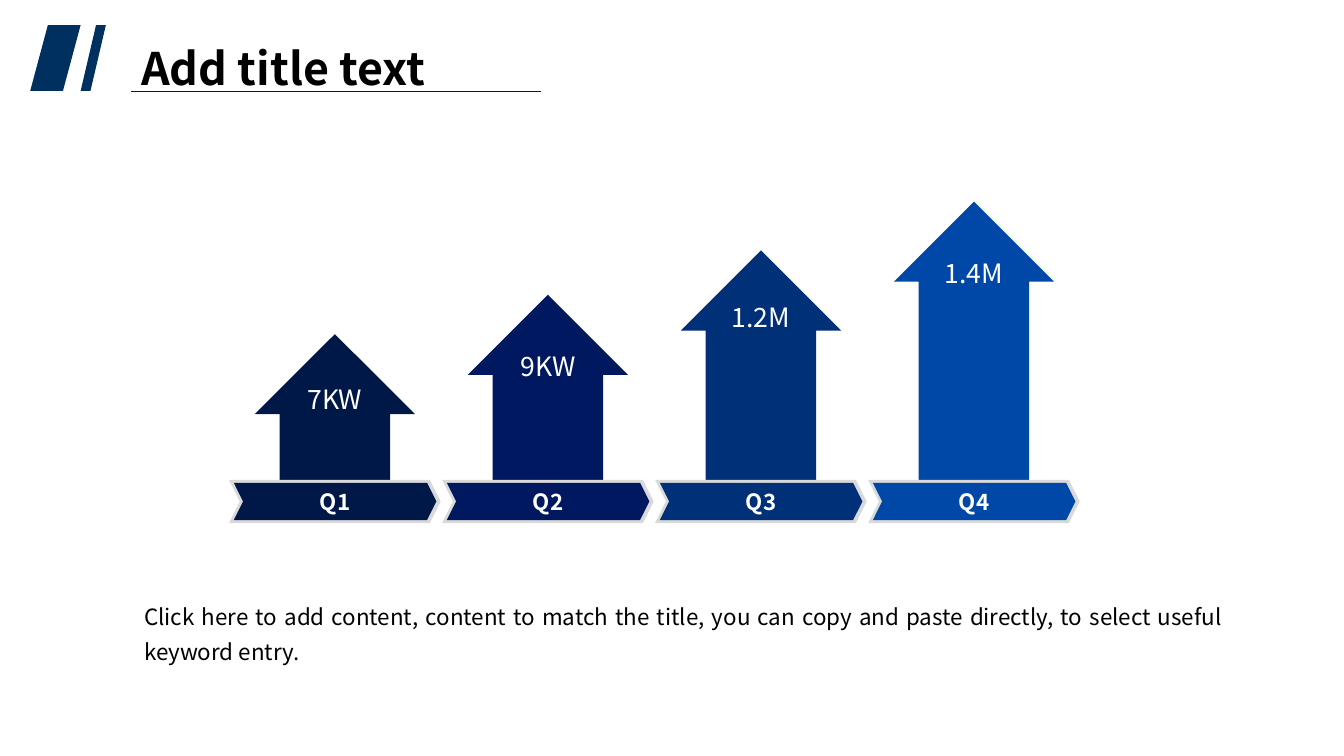
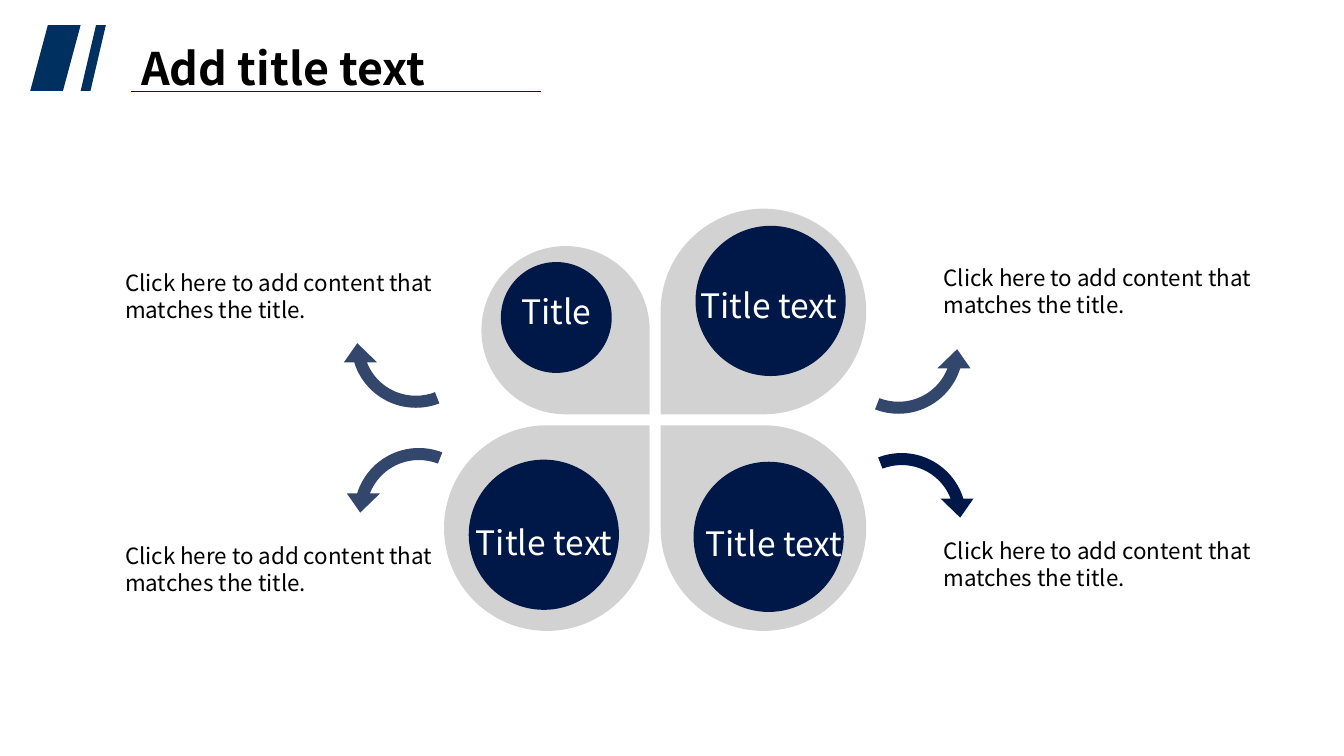
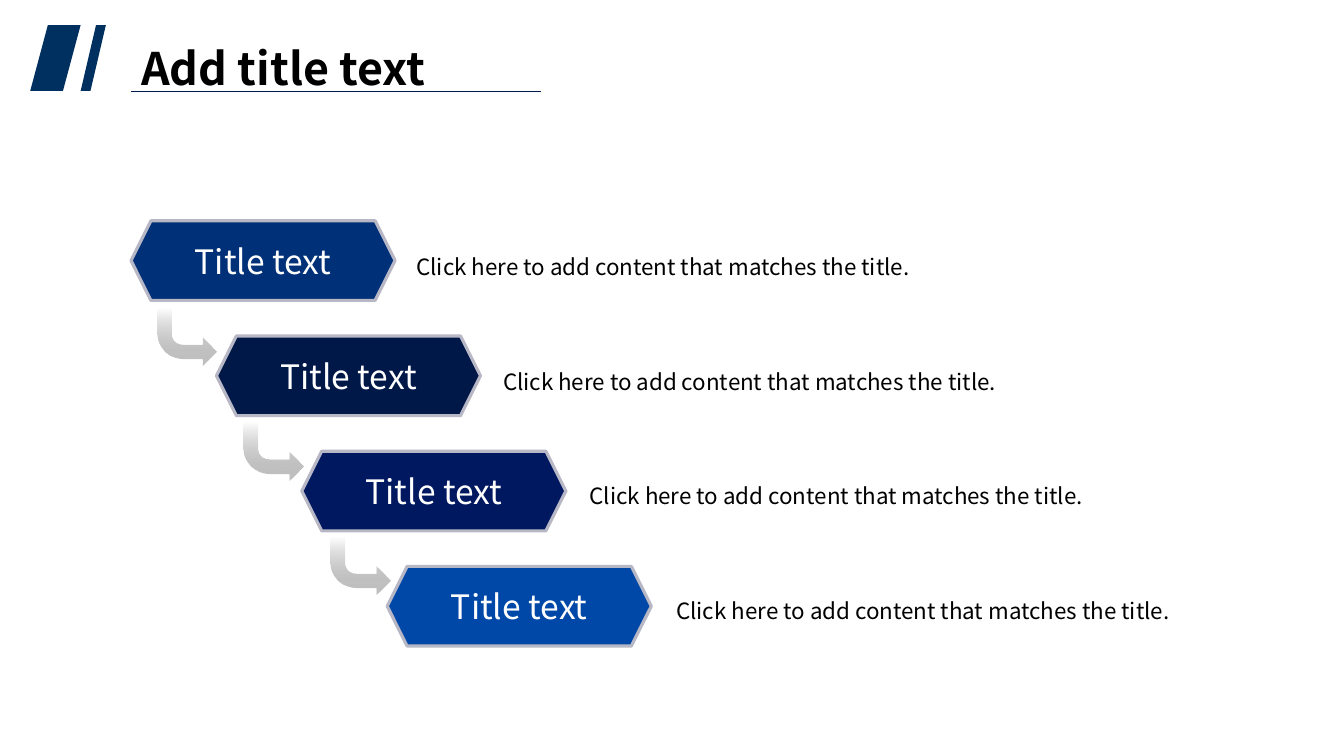
from dataclasses import dataclass

import pptx
import pptx.dml.color
import pptx.enum.shapes
import pptx.enum.text
import pptx.oxml.ns
import pptx.oxml.xmlchemy
import pptx.shapes.autoshape
import pptx.slide
import pptx.util
from lxml import etree

Pt = pptx.util.Pt
SHAPE = pptx.enum.shapes.MSO_SHAPE
ALIGN = pptx.enum.text.PP_ALIGN
ANCHOR = pptx.enum.text.MSO_ANCHOR
AUTO_SIZE = pptx.enum.text.MSO_AUTO_SIZE
qn = pptx.oxml.ns.qn

FONT = "Noto Sans CJK SC"
BLACK, WHITE = "000000", "FFFFFF"
MIDNIGHT, INDIGO, NAVY, ROYAL = "001848", "001860", "003078", "0048A8"
ACCENT = "003060"
PETAL_GREY, BORDER_GREY, HEXAGON_EDGE = "A6A6A6", "D9D9D9", "B7B7C5"
NOTE = "Click here to add content that matches the title."


@dataclass(frozen=True)
class Box:
    left: float
    top: float
    width: float
    height: float

    def lengths(self) -> tuple:
        return Pt(self.left), Pt(self.top), Pt(self.width), Pt(self.height)


@dataclass(frozen=True)
class TextStyle:
    size: float
    colour: str = BLACK
    bold: bool = False
    align: ALIGN = ALIGN.LEFT
    anchor: ANCHOR = ANCHOR.TOP
    line_spacing: float = 1.0
    space_before: float = 0
    space_after: float = 0
    inset_x: float = 9.4
    inset_y: float = 5
    wrap: bool = True
    grow: bool = True


@dataclass(frozen=True)
class Quarter:
    name: str
    value: str
    colour: str
    arrow_top: float
    value_top: float


@dataclass(frozen=True)
class Petal:
    label: str
    on_right: bool
    on_top: bool
    size: float
    circle: Box
    label_box: Box
    note_top: float
    arrow_left: float
    arrow_top: float
    arrow_opacity: int = 80


TITLE_STYLE = TextStyle(32, bold=True, line_spacing=0.9, inset_x=7.2, inset_y=3.6, grow=False)
BODY_STYLE = TextStyle(16, align=ALIGN.JUSTIFY, anchor=ANCHOR.MIDDLE, line_spacing=1.3,
                       space_before=8, grow=False)
QUARTER_STYLE = TextStyle(16, WHITE, bold=True, align=ALIGN.CENTER, anchor=ANCHOR.MIDDLE,
                          inset_x=7.2, inset_y=3.6, grow=False)
VALUE_STYLE = TextStyle(19, WHITE, align=ALIGN.CENTER, anchor=ANCHOR.MIDDLE)
PETAL_LABEL_STYLE = TextStyle(24, WHITE, wrap=False)
PETAL_NOTE_STYLE = TextStyle(16)
STEP_STYLE = TextStyle(24, WHITE, align=ALIGN.CENTER, anchor=ANCHOR.MIDDLE, grow=False)
STEP_NOTE_STYLE = TextStyle(16, align=ALIGN.JUSTIFY, anchor=ANCHOR.MIDDLE, line_spacing=1.3,
                            space_after=8)

QUARTERS = [
    Quarter("Q1", "7KW", MIDNIGHT, 238.7, 268.6),
    Quarter("Q2", "9KW", INDIGO, 210.6, 244.8),
    Quarter("Q3", "1.2M", NAVY, 178.9, 210.2),
    Quarter("Q4", "1.4M", ROYAL, 144, 178.6),
]

PETALS = [
    Petal("Title", False, True, 120.2, Box(357.8, 187.2, 79.2, 79.2),
          Box(362.9, 203, 76.3, 38.9), 187.2, 243.4, 191.5),
    Petal("Title text", True, True, 146.9, Box(496.8, 161.3, 107.3, 107.3),
          Box(491, 198.7, 120.2, 38.9), 183.6, 588.2, 195.8),
    Petal("Title text", False, False, 146.9, Box(334.8, 328.3, 107.3, 107.3),
          Box(330.5, 367.9, 120.2, 38.9), 382.3, 245.5, 312.5),
    Petal("Title text", True, False, 146.9, Box(495.4, 329.8, 107.3, 107.3),
          Box(494.6, 368.6, 120.2, 38.9), 378.7, 590.4, 316.1, 100),
]


def rgb(colour: str) -> pptx.dml.color.RGBColor:
    return pptx.dml.color.RGBColor.from_string(colour)


def set_opacity(colour_element: etree.ElementBase, percent: int) -> None:
    etree.SubElement(colour_element, qn("a:alpha")).set("val", str(percent * 1000))


def add_shape(slide: pptx.slide.Slide, kind: SHAPE, box: Box, colour: str, opacity: int = 100,
              adjustments: tuple = (), flip_h: bool = False,
              flip_v: bool = False) -> pptx.shapes.autoshape.Shape:
    shape = slide.shapes.add_shape(kind, *box.lengths())
    shape.shadow.inherit = False
    shape.line.fill.background()
    shape.fill.solid()
    shape.fill.fore_color.rgb = rgb(colour)
    if opacity < 100:
        set_opacity(shape.element.spPr.find(".//" + qn("a:srgbClr")), opacity)
    for index, value in enumerate(adjustments):
        shape.adjustments[index] = value
    frame = shape.element.spPr.find(qn("a:xfrm"))
    for attribute, flipped in (("flipH", flip_h), ("flipV", flip_v)):
        if flipped:
            frame.set(attribute, "1")
    return shape


def write(shape: pptx.shapes.autoshape.Shape, text: str, style: TextStyle) -> None:
    frame = shape.text_frame
    frame.text = text
    frame.word_wrap = style.wrap
    frame.auto_size = AUTO_SIZE.SHAPE_TO_FIT_TEXT if style.grow else AUTO_SIZE.NONE
    frame.vertical_anchor = style.anchor
    frame.margin_left = frame.margin_right = Pt(style.inset_x)
    frame.margin_top = frame.margin_bottom = Pt(style.inset_y)
    paragraph = frame.paragraphs[0]
    paragraph.alignment = style.align
    paragraph.line_spacing = style.line_spacing
    paragraph.space_before = Pt(style.space_before)
    paragraph.space_after = Pt(style.space_after)
    font = paragraph.runs[0].font
    font.name = FONT
    font.size = Pt(style.size)
    font.bold = style.bold
    font.color.rgb = rgb(style.colour)


def add_text(slide: pptx.slide.Slide, box: Box, text: str, style: TextStyle) -> None:
    write(slide.shapes.add_textbox(*box.lengths()), text, style)


def add_titled_slide(deck: pptx.presentation.Presentation) -> pptx.slide.Slide:
    """Add a slide with the shared title, slanted bars and underline."""
    slide = deck.slides.add_slide(deck.slide_layouts[5])
    title = slide.shapes.title
    title.left, title.top, title.width, title.height = Box(93.6, 29.5, 363.6, 46.8).lengths()
    write(title, "Add title text", TITLE_STYLE)
    add_shape(slide, SHAPE.PARALLELOGRAM, Box(21.6, 18, 36, 47), ACCENT, adjustments=(0.35,))
    add_shape(slide, SHAPE.PARALLELOGRAM, Box(57.6, 18, 18, 47), ACCENT, adjustments=(0.61,))
    underline = slide.shapes.add_connector(
        pptx.enum.shapes.MSO_CONNECTOR.STRAIGHT, Pt(93.6), Pt(65.5), Pt(386.6), Pt(65.5))
    underline.line.color.rgb = rgb(MIDNIGHT)
    underline.line.width = Pt(0.5)
    etree.SubElement(underline.element.spPr, qn("a:effectLst"))
    return slide


def build_quarters(slide: pptx.slide.Slide) -> None:
    first_centre, pitch, arrow_bottom, arrow_width = 239.2, 152.16, 353, 114.5
    for index, quarter in enumerate(QUARTERS):
        centre = first_centre + index * pitch
        arrow = Box(centre - arrow_width / 2, quarter.arrow_top,
                    arrow_width, arrow_bottom - quarter.arrow_top)
        add_shape(slide, SHAPE.UP_ARROW, arrow, quarter.colour, adjustments=(0.69, 0.5))
        add_shape(slide, SHAPE.CHEVRON, Box(centre - 75.6, 342.7, 151.2, 31), BORDER_GREY,
                  adjustments=(0.25,))
        band = add_shape(slide, SHAPE.CHEVRON, Box(centre - 72.2, 344.9, 144.7, 26.6),
                         quarter.colour, adjustments=(0.25,))
        write(band, quarter.name, QUARTER_STYLE)
        add_text(slide, Box(centre - 38.9, quarter.value_top, 77.8, 32.4), quarter.value,
                 VALUE_STYLE)
    add_text(slide, Box(93.6, 415.4, 789.1, 69.8),
             "Click here to add content, content to match the title, you can copy and paste "
             "directly, to select useful keyword entry.", BODY_STYLE)


def build_petals(slide: pptx.slide.Slide) -> None:
    centre_x, centre_y, half_gap, arrow_size = 468, 299.9, 3.9, 107.3
    arrow_bend = (0.08, 11.42, 204.58, 149.21, 0.11)
    for petal in PETALS:
        left = centre_x + half_gap if petal.on_right else centre_x - half_gap - petal.size
        top = centre_y - half_gap - petal.size if petal.on_top else centre_y + half_gap
        add_shape(slide, SHAPE.TEAR, Box(left, top, petal.size, petal.size), PETAL_GREY, 50,
                  flip_h=petal.on_right, flip_v=petal.on_top)
        add_shape(slide, SHAPE.OVAL, petal.circle, MIDNIGHT)
        add_text(slide, petal.label_box, petal.label, PETAL_LABEL_STYLE)
        note_left = 664.6 if petal.on_right else 79.9
        add_text(slide, Box(note_left, petal.note_top, 252.7, 87.1), NOTE, PETAL_NOTE_STYLE)
        add_shape(slide, SHAPE.CIRCULAR_ARROW,
                  Box(petal.arrow_left, petal.arrow_top, arrow_size, arrow_size), MIDNIGHT,
                  petal.arrow_opacity, arrow_bend,
                  flip_h=not petal.on_right, flip_v=petal.on_top)


def add_fading_arrow(slide: pptx.slide.Slide, box: Box) -> None:
    """Add a bent arrow, down then right, that fades out towards its tail."""
    arrow = add_shape(slide, SHAPE.BENT_ARROW, box, "BFBFBF", flip_h=True)
    arrow.rotation = 180
    arrow.fill.gradient()
    arrow.fill.gradient_angle = 270
    head, tail = arrow.fill.gradient_stops
    head.position, tail.position = 0, 1
    head.color.rgb = rgb("BFBFBF")
    tail.color.rgb = rgb("717171")
    set_opacity(arrow.element.spPr.findall(".//" + qn("a:srgbClr"))[-1], 0)


def build_steps(slide: pptx.slide.Slide) -> None:
    colours = [NAVY, MIDNIGHT, INDIGO, ROYAL]
    for index, colour in enumerate(colours):
        if index < len(colours) - 1:
            add_fading_arrow(slide, Box(112.3 + index * 61.9, 220.3 + index * 81.7, 42.5, 41))
        step = add_shape(slide, SHAPE.HEXAGON,
                         Box(93.6 + index * 61, 157.7 + index * 82.3, 188.6, 56.9), colour)
        step.line.color.rgb = rgb(HEXAGON_EDGE)
        step.line.width = Pt(2.25)
        write(step, "Title text", STEP_STYLE)
        add_text(slide, Box(288 + index * 61.9, 171.4 + index * 81.8, 400.3, 32.4), NOTE,
                 STEP_NOTE_STYLE)


def main() -> None:
    deck = pptx.Presentation()
    deck.slide_width, deck.slide_height = Pt(960), Pt(540)
    for build in (build_quarters, build_petals, build_steps):
        build(add_titled_slide(deck))
    deck.save("out.pptx")


if __name__ == "__main__":
    main()
